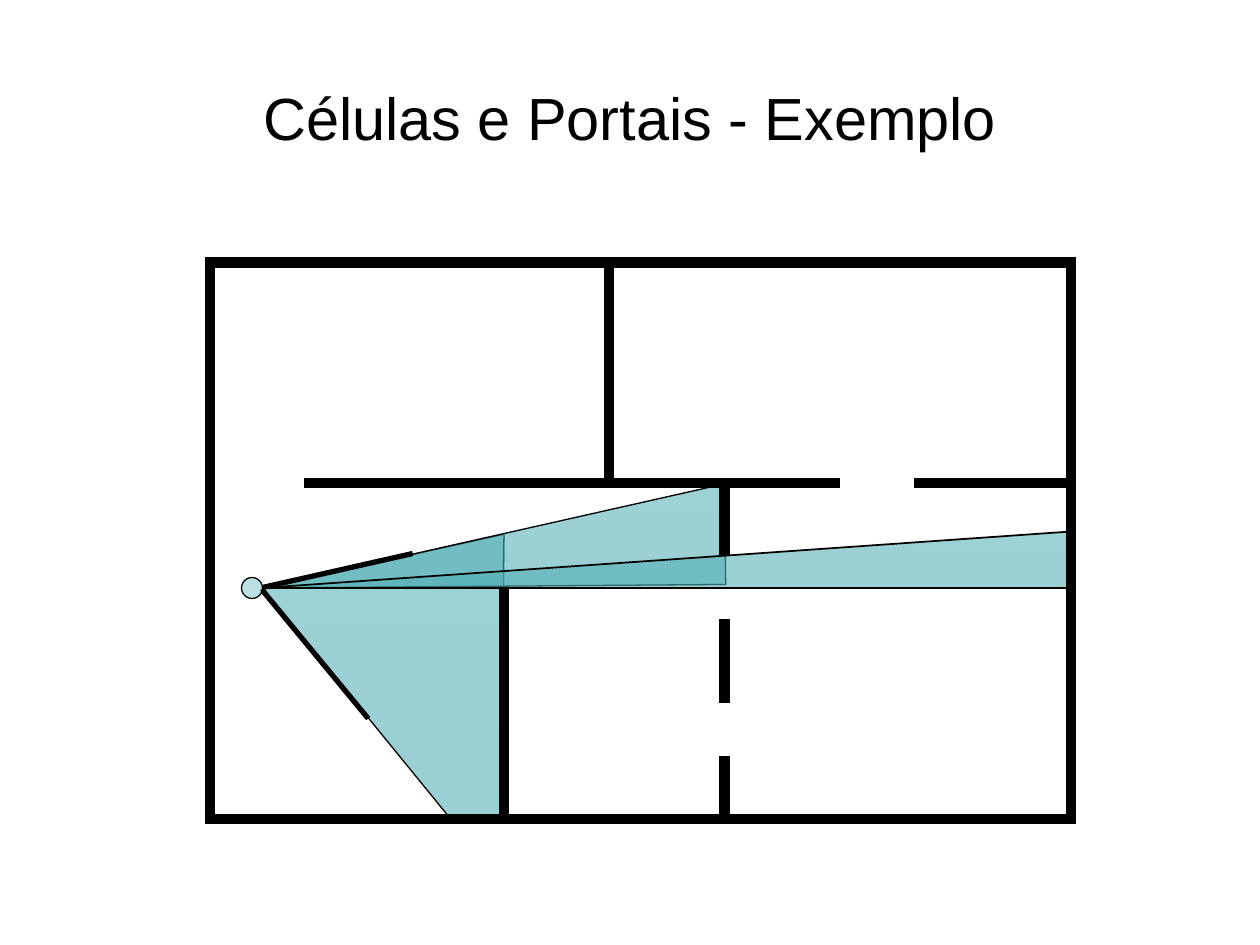
from dataclasses import dataclass

from lxml import etree
from pptx import Presentation
from pptx.dml.color import RGBColor
from pptx.enum.shapes import MSO_CONNECTOR, MSO_SHAPE
from pptx.enum.text import MSO_ANCHOR, PP_ALIGN
from pptx.oxml.ns import qn
from pptx.util import Pt

STRAIGHT = MSO_CONNECTOR.STRAIGHT
RECTANGLE, OVAL = MSO_SHAPE.RECTANGLE, MSO_SHAPE.OVAL
MIDDLE, CENTER = MSO_ANCHOR.MIDDLE, PP_ALIGN.CENTER

COLORS = {"ink": "000000", "beam": "53B0B7", "eye": "BBE0E3"}
WALL_WIDTH = 6
BEAM_OPACITIES = (57, 59)
VIEWPOINT = (150, 336)


@dataclass
class Beam:
    far_points: list[tuple[float, float]]
    line_width: float = 0.75


@dataclass
class Wall:
    x1: float
    y1: float
    x2: float
    y2: float


BEAMS = [
    Beam([(288, 305.3), (286, 467.3), (257, 467.3)]),
    Beam([(414, 276.5), (414.7, 334)]),
    Beam([(611.3, 303.8), (612.7, 336)], 1),
]
WALLS = [
    Wall(288, 468, 288, 336),
    Wall(174, 276, 480, 276),
    Wall(414, 276, 414, 318),
    Wall(414, 432, 414, 468),
    Wall(348, 276, 348, 192),
    Wall(348, 198, 348, 150),
    Wall(414, 354, 414, 402),
    Wall(522, 276, 612, 276),
]


def color(key: str) -> RGBColor:
    return RGBColor.from_string(COLORS[key])


def set_line(item, width: float) -> None:
    item.line.color.rgb = color("ink")
    item.line.width = Pt(width)


def set_style(shape, width: float, fill: str | None = None) -> None:
    shape.shadow.inherit = False
    set_line(shape, width)
    if fill:
        shape.fill.solid()
        shape.fill.fore_color.rgb = color(fill)
    else:
        shape.fill.background()


def add_outline(slide, points: list[tuple[float, float]], close: bool):
    start, *others = [(Pt(x), Pt(y)) for x, y in points]
    builder = slide.shapes.build_freeform(*start, scale=1.0)
    builder.add_line_segments(others, close=close)
    return builder.convert_to_shape()


def add_beam(slide, beam: Beam) -> None:
    region = add_outline(slide, [VIEWPOINT, *beam.far_points], close=True)
    set_style(region, beam.line_width)
    region.fill.gradient()
    region.fill.gradient_angle = 270
    for stop, opacity in zip(region.fill.gradient_stops, BEAM_OPACITIES):
        stop.color.rgb = color("beam")
    for rgb, opacity in zip(region.element.spPr.find(qn("a:gradFill")).iter(qn("a:srgbClr")), BEAM_OPACITIES):
        etree.SubElement(rgb, qn("a:alpha"), val=str(opacity * 1000))


def add_wall(slide, wall: Wall) -> None:
    segment = slide.shapes.add_connector(
        STRAIGHT, Pt(wall.x1), Pt(wall.y1), Pt(wall.x2), Pt(wall.y2))
    set_line(segment, WALL_WIDTH)
    etree.SubElement(segment.element.spPr, qn("a:effectLst"))


def add_title(slide, text: str) -> None:
    title = slide.shapes.title
    title.left, title.top, title.width, title.height = Pt(36), Pt(21.6), Pt(648), Pt(90)
    title.text_frame.text = text
    title.text_frame.vertical_anchor = MIDDLE
    heading = title.text_frame.paragraphs[0]
    heading.alignment = CENTER
    heading.font.name = "Arial"
    heading.font.size = Pt(34)
    heading.font.color.rgb = color("ink")


def add_room(slide) -> None:
    room = slide.shapes.add_shape(RECTANGLE, Pt(120), Pt(150), Pt(492), Pt(318))
    set_style(room, WALL_WIDTH)
    etree.SubElement(room.element.spPr.find(qn("a:ln")), qn("a:miter"), lim="800000")


def add_viewer(slide) -> None:
    view_angle = add_outline(slide, [(192, 312), (162, 396), (258, 384)], close=False)
    set_style(view_angle, 3)
    view_angle.rotation = 57.6
    eye = slide.shapes.add_shape(OVAL, Pt(138), Pt(330), Pt(12), Pt(12))
    set_style(eye, 0.75, "eye")
    eyelid = add_outline(slide, [(149, 337.5), (151.5, 336.2), (153.4, 335.5)], close=True)
    set_style(eyelid, 0.75, "eye")


def main() -> None:
    prs = Presentation()
    prs.slide_width, prs.slide_height = Pt(720), Pt(540)
    slide = prs.slides.add_slide(prs.slide_layouts[5])
    for beam in BEAMS:
        add_beam(slide, beam)
    add_title(slide, "Células e Portais - Exemplo")
    add_room(slide)
    for wall in WALLS:
        add_wall(slide, wall)
    add_viewer(slide)
    prs.save("out.pptx")


if __name__ == "__main__":
    main()
